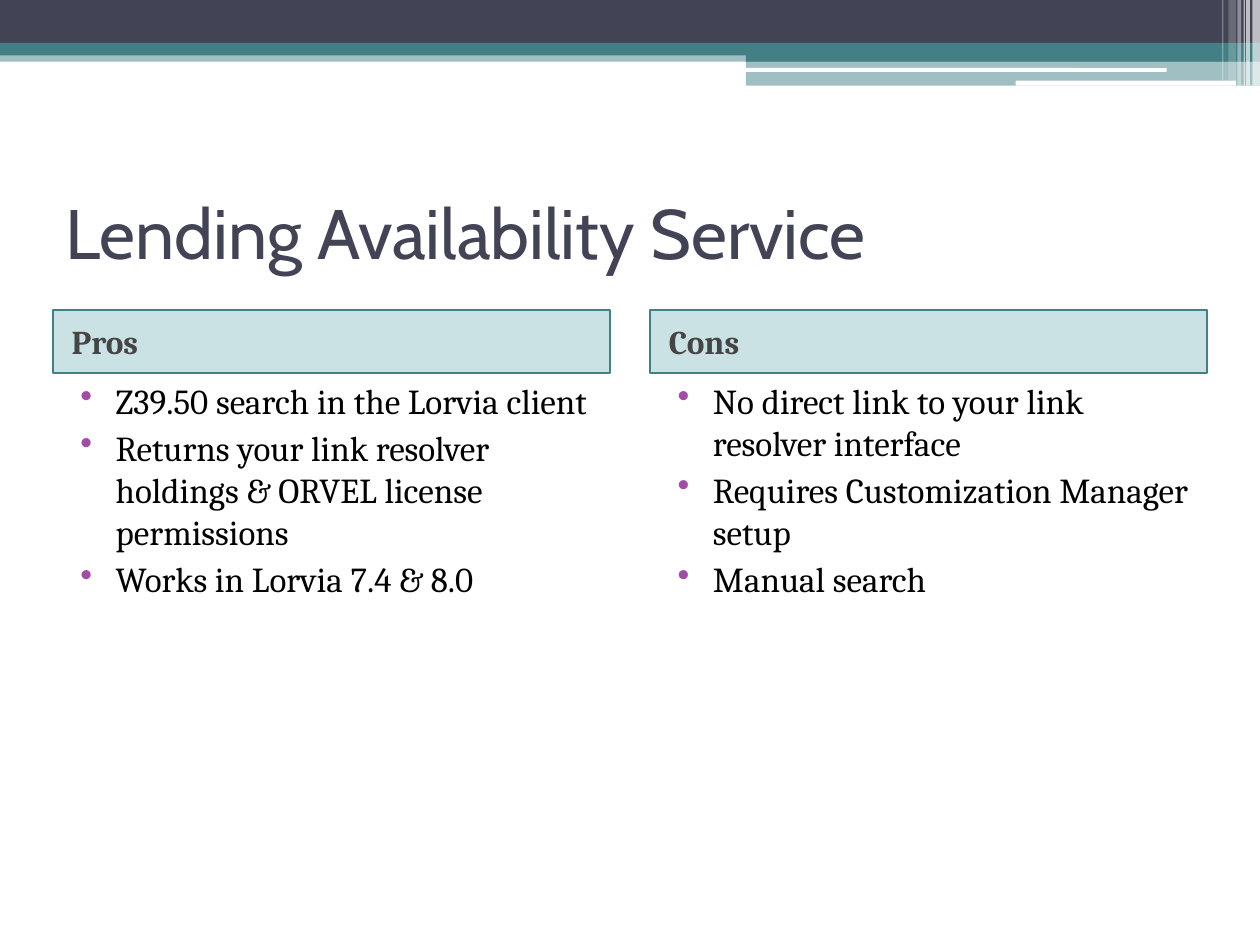
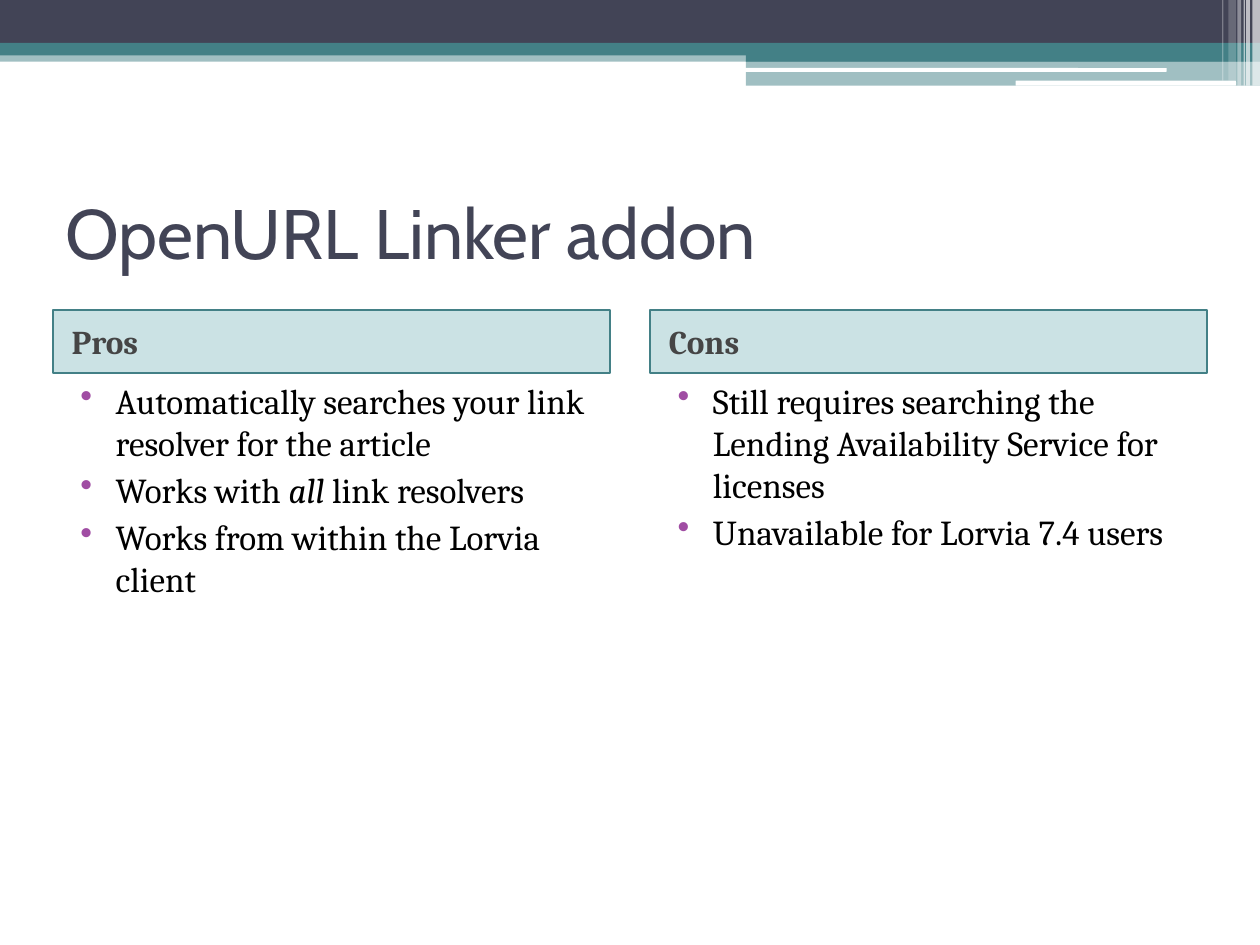
from lxml.etree import SubElement
from pptx import Presentation
from pptx.dml.color import RGBColor
from pptx.enum.shapes import MSO_SHAPE
from pptx.enum.text import MSO_ANCHOR, PP_ALIGN
from pptx.oxml.ns import qn
from pptx.util import Inches, Pt

NAVY, TEAL, WHITE = "424456", "438086", "FFFFFF"
HEADING_FILL, HEADING_TEXT = "328E97", "454545"
BULLET, BLACK = "A04DA3", "000000"
TITLE_FONT, BODY_FONT = "Cabin", "Cambria"

MARGIN, COLUMN_WIDTH, COLUMN_STEP = 0.42, 4.42, 4.74
HEADING_TOP, HEADING_HEIGHT = 2.46, 0.5

BANDS = [
    (0, 0.4, 10, 0.09, TEAL, 50),
    (0, 0, 10, 0.34, NAVY, 100),
    (0, 0.34, 10, 0.1, TEAL, 100),
    (5.92, 0.39, 4.08, 0.1, TEAL, 100),
    (5.92, 0.48, 4.08, 0.2, TEAL, 50),
]
HIGHLIGHTS = [(5.91, 0.54, 3.35, 0.03), (8.06, 0.64, 1.75, 0.04)]
STRIPES = [
    (9.94, 0.06, 0.68, 65),
    (9.89, 0.03, 0.68, 65),
    (9.87, 0.01, 0.68, 60),
    (9.82, 0.03, 0.68, 40),
    (9.75, 0.06, 0.64, 20),
    (9.7, 0.01, 0.64, 30),
]

COMPARISONS = [
    ("Lending Availability Service", {
        "Pros": ["Z39.50 search in the Lorvia client",
                 "Returns your link resolver holdings & ORVEL license permissions",
                 "Works in Lorvia 7.4 & 8.0"],
        "Cons": ["No direct link to your link resolver interface",
                 "Requires Customization Manager setup",
                 "Manual search"],
    }),
    ("OpenURL Linker addon", {
        "Pros": ["Automatically searches your link resolver for the article",
                 "Works with *all* link resolvers",
                 "Works from within the Lorvia client"],
        "Cons": ["Still requires searching the Lending Availability Service for licenses",
                 "Unavailable for Lorvia 7.4 users"],
    }),
]


def rgb(hex_code):
    """Turn a hex string into a colour."""
    return RGBColor.from_string(hex_code)


def write(frame, lines, *, size, color, font=BODY_FONT, bold=False, before=0,
          margin=0, indent=0, bullet=None, anchor=MSO_ANCHOR.TOP):
    """Fill a text frame, one paragraph a line, with *starred* words in italics."""
    frame.word_wrap = True
    frame.vertical_anchor = anchor
    for number, line in enumerate(lines):
        paragraph = frame.add_paragraph() if number else frame.paragraphs[0]
        paragraph.alignment = PP_ALIGN.LEFT
        paragraph.space_before = Pt(before)
        properties = paragraph._p.get_or_add_pPr()
        properties.set("marL", str(Inches(margin)))
        properties.set("indent", str(Inches(indent)))
        if bullet:
            bullet_color = SubElement(properties, qn("a:buClr"))
            SubElement(bullet_color, qn("a:srgbClr"), val=bullet)
            SubElement(properties, qn("a:buChar"), char="•")
        for position, words in enumerate(line.split("*")):
            run = paragraph.add_run()
            run.text = words
            run.font.name = font
            run.font.size = Pt(size)
            run.font.bold = bold
            run.font.italic = position % 2 == 1
            run.font.color.rgb = rgb(color)


class ComparisonDeck:
    """Holds the presentation, its style and the current slide."""

    def __init__(self):
        """Start an empty 10 by 7.5 inch presentation."""
        self.presentation = Presentation()
        self.presentation.slide_width = Inches(10)
        self.presentation.slide_height = Inches(7.5)
        self.slide = None

    def add_slide(self):
        """Add a blank slide with the shared banner."""
        self.slide = self.presentation.slides.add_slide(self.presentation.slide_layouts[6])
        for left, top, width, height, color, opacity in BANDS:
            self.block(left, top, width, height, color, opacity)
        for left, top, width, height in HIGHLIGHTS:
            self.block(left, top, width, height, WHITE, kind=MSO_SHAPE.ROUNDED_RECTANGLE)
        for left, width, height, opacity in STRIPES:
            self.block(left, 0, width, height, WHITE, opacity)

    def block(self, left, top, width, height, color, opacity=100, outline=None,
              kind=MSO_SHAPE.RECTANGLE):
        """Draw a filled block with an optional outline."""
        block = self.slide.shapes.add_shape(
            kind, Inches(left), Inches(top), Inches(width), Inches(height))
        block.shadow.inherit = False
        block.fill.solid()
        block.fill.fore_color.rgb = rgb(color)
        if opacity < 100:
            fill_color = block._element.spPr.find(qn("a:solidFill"))[0]
            SubElement(fill_color, qn("a:alpha"), val=str(opacity * 1000))
        if outline:
            block.line.color.rgb = rgb(outline)
            block.line.width = Pt(1)
        else:
            block.line.fill.background()
        return block

    def text(self, left, top, width, height, lines, **style):
        """Place a text box."""
        box = self.slide.shapes.add_textbox(
            Inches(left), Inches(top), Inches(width), Inches(height))
        write(box.text_frame, lines, **style)

    def title(self, wording):
        """Place the slide title."""
        self.text(MARGIN, 1.25, 9.17, 1.17, [wording], size=40, color=NAVY,
                  font=TITLE_FONT, anchor=MSO_ANCHOR.MIDDLE)

    def column(self, index, heading, points):
        """Place a headed column of bullet points."""
        left = MARGIN + index * COLUMN_STEP
        panel = self.block(left, HEADING_TOP, COLUMN_WIDTH, HEADING_HEIGHT,
                           HEADING_FILL, 25, outline=TEAL)
        write(panel.text_frame, [heading], size=19, color=HEADING_TEXT, bold=True,
              before=3, margin=0.05, anchor=MSO_ANCHOR.MIDDLE)
        self.text(left, HEADING_TOP + HEADING_HEIGHT, COLUMN_WIDTH, 4.25, points,
                  size=20, color=BLACK, before=3, margin=0.4, indent=-0.28, bullet=BULLET)


def main():
    """Build and save the comparison slides."""
    deck = ComparisonDeck()
    for title, columns in COMPARISONS:
        deck.add_slide()
        deck.title(title)
        for index, (heading, points) in enumerate(columns.items()):
            deck.column(index, heading, points)
    deck.presentation.save("out.pptx")


if __name__ == "__main__":
    main()
